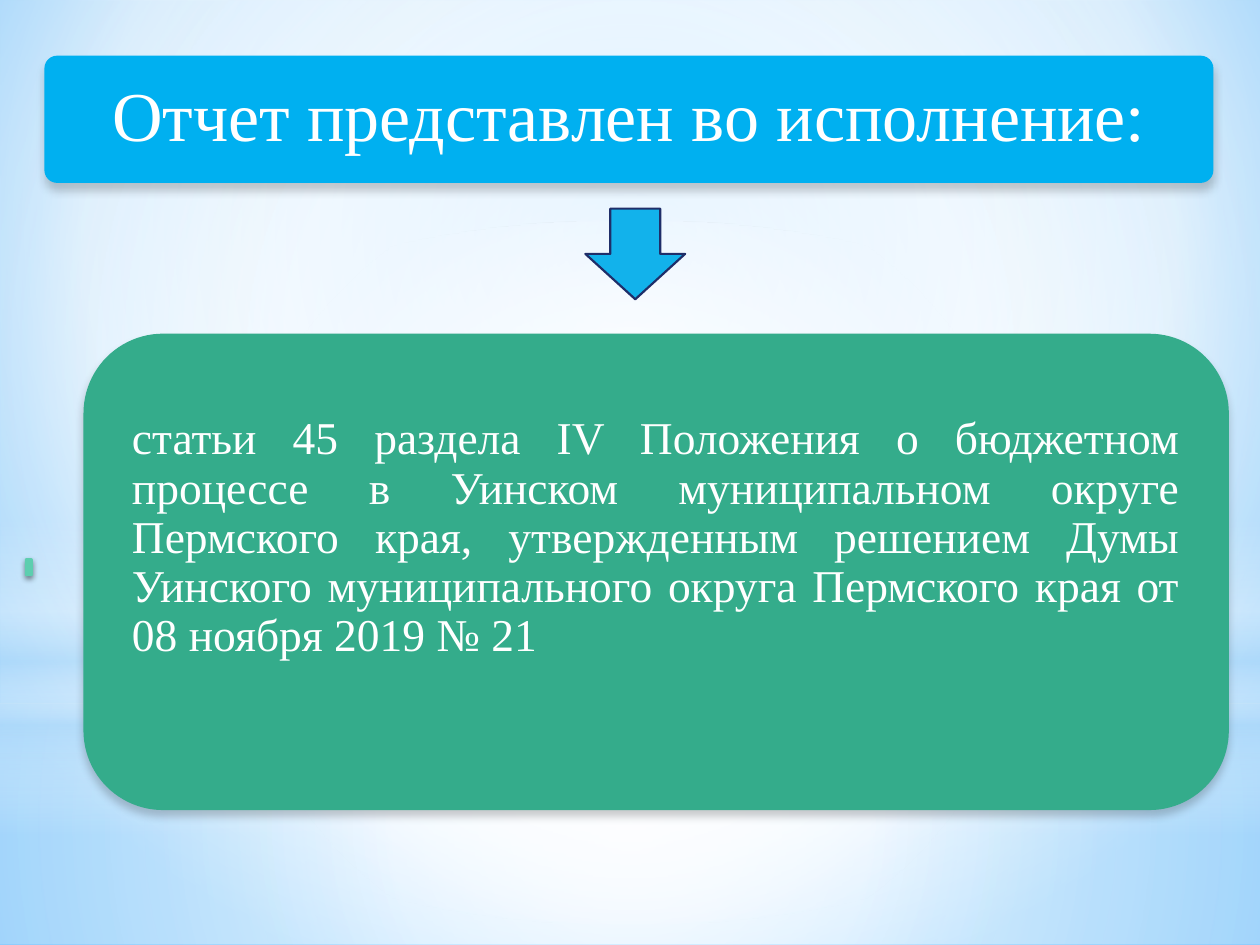
import pptx
import pptx.util
import pptx.dml.color
import pptx.enum.shapes
import pptx.enum.text
import pptx.oxml.ns
import lxml.etree

Pt = pptx.util.Pt
RGB = pptx.dml.color.RGBColor
KIND = pptx.enum.shapes.MSO_SHAPE
ALIGN = pptx.enum.text.PP_ALIGN
qn = pptx.oxml.ns.qn

WHITE = RGB(0xFF, 0xFF, 0xFF)
BLACK = RGB(0x00, 0x00, 0x00)
PALE = RGB(0xB4, 0xDC, 0xFA)
SKY = RGB(0x9E, 0xD5, 0xFF)
DEEP = RGB(0x5B, 0xB9, 0xFF)
BLUE = RGB(0x00, 0xB0, 0xF0)
GREEN = RGB(0x34, 0xAC, 0x8B)
MINT = RGB(0x5D, 0xCE, 0xAF)
CYAN = RGB(0x12, 0xB2, 0xEB)
NAVY = RGB(0x1F, 0x2E, 0x69)


def add_tint(parent, color, alpha):
    tint = lxml.etree.SubElement(parent, qn("a:srgbClr"), val=str(color))
    lxml.etree.SubElement(tint, qn("a:alpha"), val=str(alpha * 1000))


def blend(holder, stops, rect):
    """Swap the solid fill for a gradient: circular to rect, or downward if rect is None."""
    solid = holder.find(qn("a:solidFill"))
    grad = lxml.etree.Element(qn("a:gradFill"), rotWithShape="1")
    items = lxml.etree.SubElement(grad, qn("a:gsLst"))
    for pos, color, alpha in stops:
        stop = lxml.etree.SubElement(items, qn("a:gs"), pos=str(pos * 1000))
        add_tint(stop, color, alpha)
    if rect:
        way = lxml.etree.SubElement(grad, qn("a:path"), path="circle")
        sides = {side: str(part * 1000) for side, part in zip("ltrb", rect)}
        lxml.etree.SubElement(way, qn("a:fillToRect"), **sides)
    else:
        lxml.etree.SubElement(grad, qn("a:lin"), ang="5400000", scaled="0")
    holder.replace(solid, grad)


deck = pptx.Presentation()
deck.slide_width, deck.slide_height = Pt(720), Pt(540)
slide = deck.slides.add_slide(deck.slide_layouts[6])
shapes = slide.shapes

# Background
slide.background.fill.solid()
blend(slide.background._cSld.bg.bgPr,
      [(0, SKY, 100), (69, WHITE, 100), (100, DEEP, 100)], (20, 10, 20, 60))

MID = (50, 50, 50, 50)
glows = [
    (KIND.RECTANGLE, 402, 138, MID,
     [(0, WHITE, 91), (37, WHITE, 76), (100, PALE, 79)]),
    (KIND.RECTANGLE, 0, 402, MID,
     [(0, WHITE, 89), (48, WHITE, 62), (100, PALE, 79)]),
    (KIND.RECTANGLE, 297, 180, None,
     [(0, WHITE, 0), (29, WHITE, 30), (45, PALE, 40),
      (55, WHITE, 26), (65, PALE, 60), (100, WHITE, 0)]),
    (KIND.OVAL, 126, 402, MID, [(0, WHITE, 100), (56, WHITE, 0)]),
]
for kind, top, height, rect, stops in glows:
    glow = shapes.add_shape(kind, 0, Pt(top), Pt(720), Pt(height))
    glow.shadow.inherit = False
    glow.line.fill.background()
    glow.fill.solid()
    blend(glow._element.spPr, stops, rect)

# Title, marker and body: box, corner, fill, shadow (alpha, blur, distance)
SOFT = (20, 5, 4)
cards = []
for box, corner, color, (alpha, blur, dist) in [
    ((25.4, 31.8, 668, 72.7), 0.1, BLUE, SOFT),
    ((14.2, 319, 4.6, 10.2), 0.167, MINT, (45, 3.1, 1.8)),
    ((47.7, 190.7, 654.5, 272.2), 0.167, GREEN, SOFT),
]:
    card = shapes.add_shape(KIND.ROUNDED_RECTANGLE, *map(Pt, box))
    card.adjustments[0] = corner
    card.fill.solid()
    card.fill.fore_color.rgb = color
    card.line.fill.background()
    card.shadow.inherit = False
    shade = lxml.etree.SubElement(
        card._element.spPr.find(qn("a:effectLst")), qn("a:outerShdw"),
        blurRad=str(Pt(blur)), dist=str(Pt(dist)), dir="5400000",
        algn="ctr", rotWithShape="0")
    add_tint(shade, BLACK, alpha)
    cards.append(card)

title, marker, body = cards
BODY = ("статьи 45 раздела IV Положения о бюджетном процессе в Уинском "
        "муниципальном округе Пермского края, утвержденным решением Думы "
        "Уинского муниципального округа Пермского края от "
        "08 ноября 2019 № 21")
# The deeper bottom inset lifts the body text above the middle
for card, text, size, align, side, low in [
    (title, "Отчет представлен во исполнение:", 40, ALIGN.CENTER, 6, 6),
    (body, BODY, 26, ALIGN.JUSTIFY, 14.4, 52.6),
]:
    frame = card.text_frame
    frame.text = text
    frame.word_wrap = True
    frame.vertical_anchor = pptx.enum.text.MSO_ANCHOR.MIDDLE
    frame.margin_left = frame.margin_right = frame.margin_top = Pt(side)
    frame.margin_bottom = Pt(low)
    line = frame.paragraphs[0]
    line.alignment = align
    line.line_spacing = 0.9
    font = line.runs[0].font
    font.name = "Times New Roman"
    font.size = Pt(size)
    font.color.rgb = WHITE

# Arrow from title to body
arrow = shapes.add_shape(KIND.RIGHT_ARROW, Pt(337.1), Pt(116.6), Pt(51.8), Pt(57))
arrow.rotation = 90
arrow.shadow.inherit = False
arrow.fill.solid()
arrow.fill.fore_color.rgb = CYAN
arrow.line.color.rgb = NAVY
arrow.line.width = Pt(1.25)

deck.save("out.pptx")
